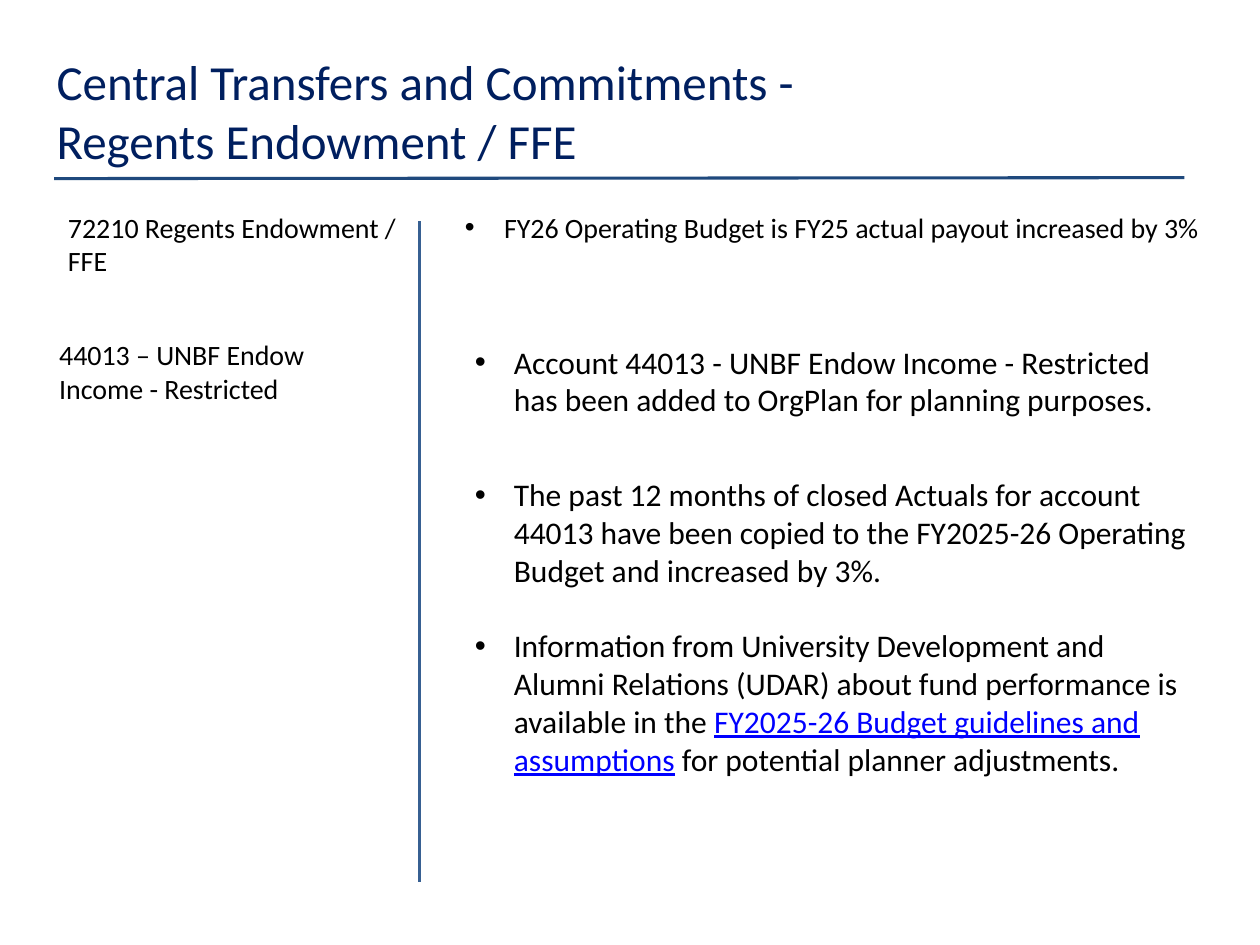
from dataclasses import dataclass

from lxml import etree
from pptx import Presentation
from pptx.dml.color import RGBColor
from pptx.enum.shapes import MSO_CONNECTOR
from pptx.oxml.ns import qn
from pptx.util import Inches, Pt

STRAIGHT = MSO_CONNECTOR.STRAIGHT
WIDTH, HEIGHT = Inches(10), Inches(7.5)


@dataclass(frozen=True)
class Theme:
    """Colours, font and type sizes of the deck."""
    font: str = "Calibri"
    title: str = "001F5F"
    body: str = "000000"
    link: str = "0000FF"
    rule: str = "1F497D"
    divider: str = "376092"
    title_size: float = 28
    label_size: float = 16
    detail_size: float = 18
    line_width: float = 1.75


THEME = Theme()


def across(percent):
    """Turn a percentage of the slide's width into a length."""
    return int(WIDTH * percent / 100)


def down(percent):
    """Turn a percentage of the slide's height into a length."""
    return int(HEIGHT * percent / 100)


def add_span(para, text, size, color=THEME.body, underline=None):
    """Append formatted text to a paragraph."""
    span = para.add_run()
    span.text = text
    span.font.name = THEME.font
    span.font.size = Pt(size)
    span.font.color.rgb = RGBColor.from_string(color)
    span.font.underline = underline


def set_indent(para, left, hanging=0, bullet=False):
    """Set a paragraph's indents in inches and its optional bullet."""
    properties = para._p.get_or_add_pPr()
    properties.set("marL", str(Inches(left)))
    properties.set("indent", str(-Inches(hanging)))
    if bullet:
        font = etree.SubElement(properties, qn("a:buFont"))
        font.set("typeface", "Arial")
        etree.SubElement(properties, qn("a:buChar")).set("char", "•")


def add_box(page, left, top, width, height, inset=True):
    """Add a wrapping text box placed in percentages of the slide."""
    box = page.shapes.add_textbox(across(left), down(top), across(width), down(height))
    frame = box.text_frame
    frame.word_wrap = True
    if not inset:
        frame.margin_left = frame.margin_right = frame.margin_bottom = 0
        frame.margin_top = Inches(0.01)
    return frame


def add_label(page, text, place, size=THEME.label_size, color=THEME.body, bullet=False):
    """Add a one-paragraph text box without side insets."""
    para = add_box(page, *place, inset=False).paragraphs[0]
    para.space_before = Pt(1)
    if bullet:
        set_indent(para, 0.33, 0.31, bullet=True)
    else:
        set_indent(para, 0.01)
    add_span(para, text, size, color)


def add_details(page, items, place):
    """Add a bulleted list from pairs of gap after and spans."""
    frame = add_box(page, *place)
    for index, (gap, spans) in enumerate(items):
        para = frame.add_paragraph() if index else frame.paragraphs[0]
        para.space_after = Pt(gap)
        set_indent(para, 0.31, 0.31, bullet=True)
        for text, style in spans:
            add_span(para, text, THEME.detail_size, **style)


def add_line(page, start, end, color):
    """Draw a straight line between two points given in percentages."""
    line = page.shapes.add_connector(
        STRAIGHT, across(start[0]), down(start[1]), across(end[0]), down(end[1]))
    line.line.color.rgb = RGBColor.from_string(color)
    line.line.width = Pt(THEME.line_width)
    etree.SubElement(line._element.spPr, qn("a:effectLst"))


def main():
    """Build the slide and save the deck."""
    deck = Presentation()
    deck.slide_width, deck.slide_height = WIDTH, HEIGHT
    page = deck.slides.add_slide(deck.slide_layouts[6])

    add_label(page, "Central Transfers and Commitments - Regents Endowment / FFE",
              (4.4, 5.33, 69.2, 12.8), THEME.title_size, THEME.title)
    add_line(page, (4.3, 18.9), (94, 18.8), THEME.rule)
    add_line(page, (33.3, 23.4), (33.3, 93.33), THEME.divider)

    add_label(page, "72210 Regents Endowment / FFE", (5.3, 22.13, 26.3, 7.33))
    add_label(page, "FY26 Operating Budget is FY25 actual payout increased by 3%",
              (36.7, 22.13, 59.8, 7.6), bullet=True)
    add_label(page, "44013 – UNBF Endow Income - Restricted", (4.6, 35.6, 26.3, 7.33))

    link = {"color": THEME.link, "underline": True}
    add_details(page, [
        (32.6, [("Account 44013 - UNBF Endow Income - Restricted has been added "
                 "to OrgPlan for planning purposes.", {})]),
        (21.6, [("The past 12 months of closed Actuals for account 44013 have been "
                 "copied to the FY2025-26 Operating Budget and increased by 3%.", {})]),
        (11, [("Information from University Development and Alumni Relations (UDAR) "
               "about fund performance is available in the ", {}),
              ("FY2025-26 Budget guidelines and assumptions", link),
              (" for potential planner adjustments.", {})]),
    ], (36.7, 35.6, 58.8, 58))

    deck.save("out.pptx")


if __name__ == "__main__":
    main()
